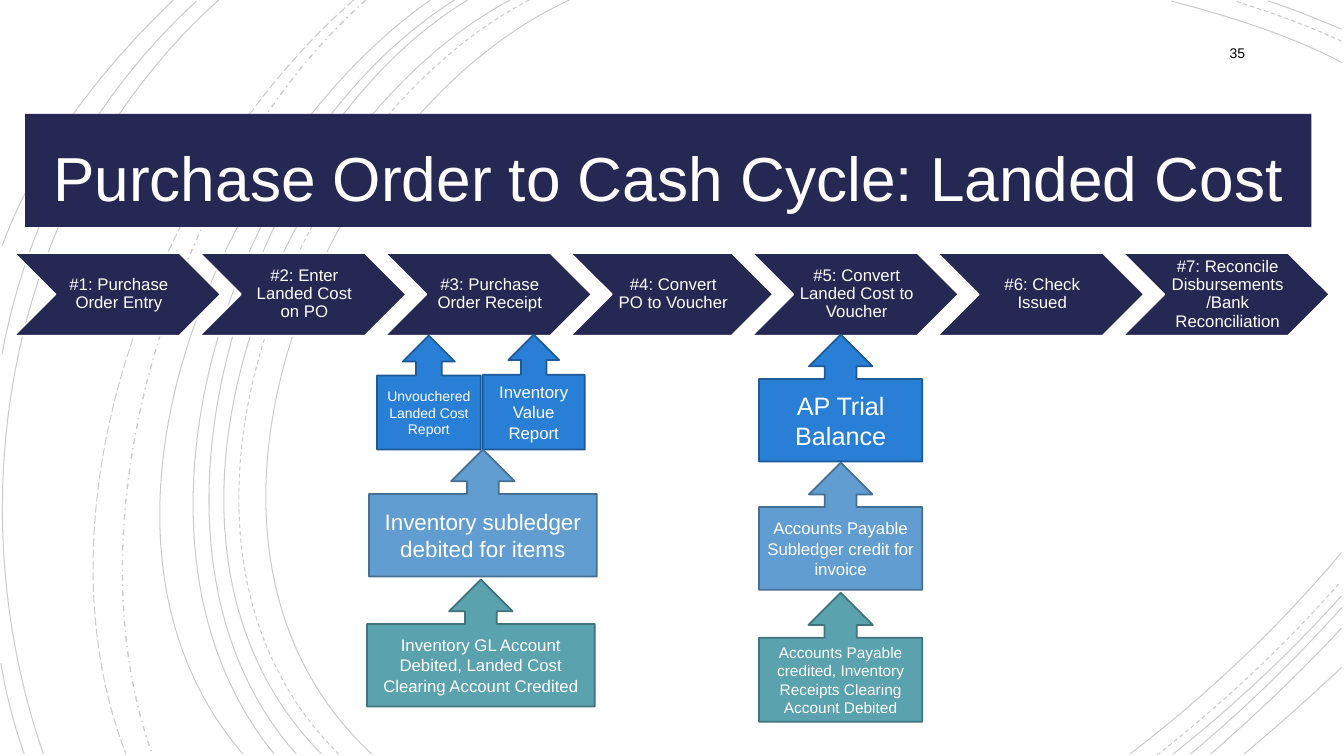
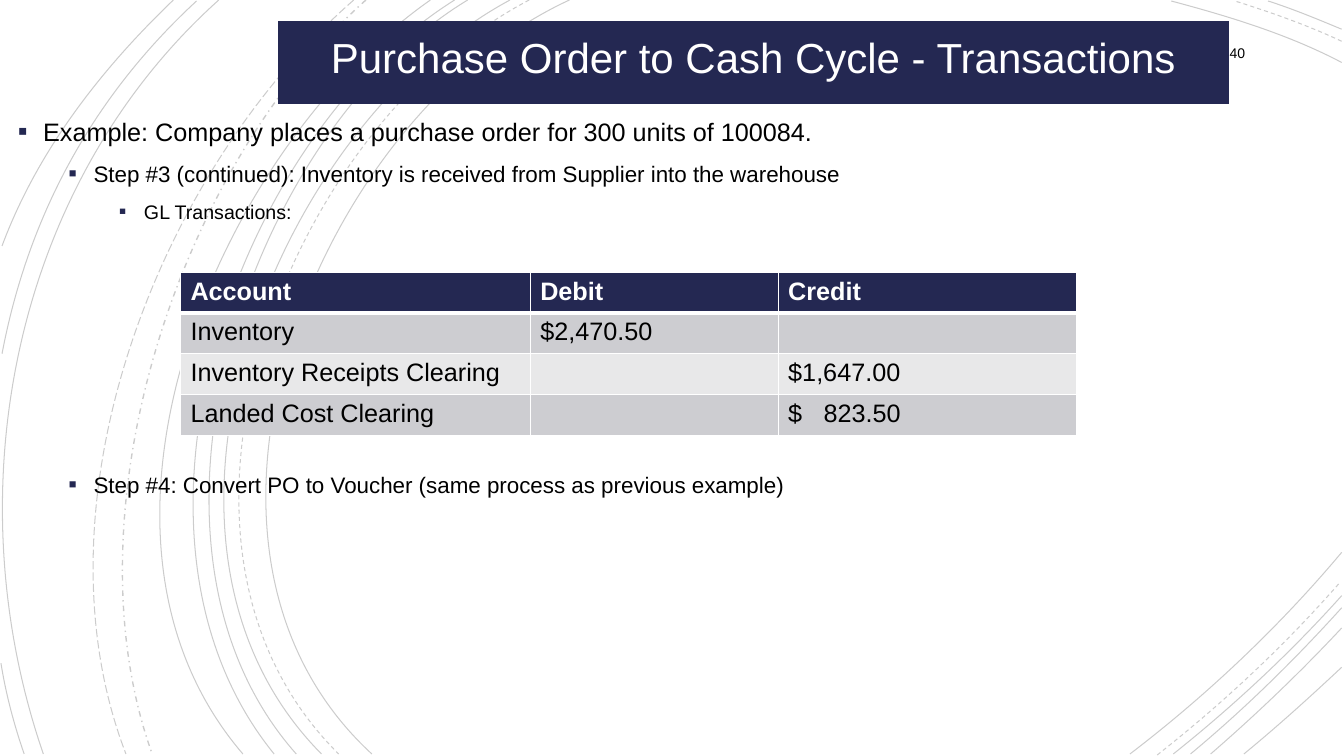
from pptx import Presentation
from pptx.dml.color import RGBColor as Rgb
from pptx.enum.dml import MSO_LINE as Dash
from pptx.enum.shapes import MSO_SHAPE as Geo
from pptx.enum.text import MSO_ANCHOR as Anchor, PP_ALIGN as Align
from pptx.oxml.ns import qn
from pptx.util import Emu, Inches, Pt
from lxml.etree import SubElement as Sub

COLS, ROWS = 133.33, 75
NAVY, WHITE, BLACK = "242852", "FFFFFF", "000000"
BLUE, SKY, TEAL = ("297FD5", "1D5A97"), ("629DD1", "466F94"), ("5AA2AE", "40737B")
GREY, PALE = "CDCDD1", "E8E8E9"

ARCS = {
    Dash.SOLID: [
        (56.5, 0, 31.5, 11.5, 14.3, 54, 36.9, 74.8),
        (133.1, 6.2, 127.8, 3.4, 121.8, 1.6, 116.2, 0.1),
        (112.1, 74.8, 119.7, 69, 126.9, 62.2, 133.1, 54.8),
        (50.6, 0, 27, 12.7, 11, 53.7, 31.9, 74.8),
        (133.1, 2.9, 130.7, 1.9, 128.3, 0.9, 125.8, 0.1),
        (116.4, 74.8, 122.3, 70.1, 128, 64.8, 133.1, 59.1),
        (46.4, 0, 24.4, 13.3, 11, 54.1, 29.4, 74.8),
        (118.1, 74.8, 123.4, 70.4, 128.4, 65.5, 133.1, 60.3),
        (45.1, 0, 23.1, 13.8, 9.7, 53.3, 27.2, 74.8),
        (120.1, 74.8, 124.6, 70.9, 129, 66.7, 133.1, 62.3),
        (42.7, 0, 21.7, 14.7, 5.3, 52.9, 24.1, 74.8),
        (123.4, 74.8, 126.7, 72.1, 129.9, 69.2, 133.1, 66.2),
        (21.7, 0, 1.1, 18.5, -4.6, 49, 4.3, 74.8),
        (19.5, 0.1, 9.2, 9.6, 2.8, 21.4, 0.2, 35.1),
        (0.1, 65.8, 0.6, 68.9, 1.4, 71.9, 2.4, 74.8),
        (17.2, 0, 10, 6.9, 3.7, 15, 0.2, 24.4),
    ],
    Dash.DASH: [
        (52.5, 0, 28.5, 12.5, 12.3, 53.7, 33.6, 74.8),
        (133.1, 4.1, 129.7, 2.5, 126, 1.2, 122.5, 0.1),
        (114.8, 74.9, 121.3, 69.8, 127.5, 64, 133, 57.7),
    ],
    Dash.DASH_DOT: [(36.3, 0, 17.6, 16.6, 6.5, 50.9, 15.1, 74.8)],
    Dash.LONG_DASH: [(35.1, 0, 15.7, 16.9, 2.9, 49.9, 12.5, 74.8)],
}

STEPS = [
    "#1: Purchase Order Entry",
    "#2: Enter Landed Cost on PO",
    "#3: Purchase Order Receipt",
    "#4: Convert PO to Voucher",
    "#5: Convert Landed Cost to Voucher",
    "#6: Check Issued",
    "#7: Reconcile Disbursements /Bank Reconciliation",
]

CALLS = [
    ((37.4, 33.3, 10.3, 11.3), BLUE, 10, "Unvouchered Landed Cost Report"),
    ((75.3, 33.2, 16.2, 12.6), BLUE, 18, "AP Trial Balance"),
    ((75.3, 45.9, 16.2, 12.6), SKY, 12, "Accounts Payable Subledger credit for invoice"),
    ((75.3, 58.8, 16.2, 12.8), TEAL, 11,
     "Accounts Payable credited, Inventory Receipts Clearing Account Debited"),
    ((47.9, 33.2, 10.1, 11.4), BLUE, 12, "Inventory Value Report"),
    ((36.6, 44.6, 22.6, 12.6), SKY, 16, "Inventory subledger debited for items"),
    ((36.4, 57.5, 22.6, 12.6), TEAL, 12,
     "Inventory GL Account Debited, Landed Cost Clearing Account Credited"),
]

POINTS = [
    (0, 18, 0, "Example: Company places a purchase order for 300 units of 100084."),
    (1, 16, 6, "Step #3 (continued): Inventory is received from Supplier into the warehouse"),
    (2, 14, 6, "GL Transactions:"),
    (1, 16, 173, "Step #4: Convert PO to Voucher (same process as previous example)"),
]

ENTRIES = [
    ("Account", "Debit", "Credit"),
    ("Inventory", "$2,470.50", ""),
    ("Inventory Receipts Clearing", "", "$1,647.00"),
    ("Landed Cost Clearing", "", "$\t823.50"),
]


def tint(code):
    return Rgb.from_string(code)


class Deck:
    font = "Arial"

    def __init__(self):
        self.show = Presentation()
        self.show.slide_width, self.show.slide_height = Inches(13.33), Inches(7.5)
        self.slide = None

    def x(self, cols):
        return Emu(round(self.show.slide_width * cols / COLS))

    def y(self, rows):
        return Emu(round(self.show.slide_height * rows / ROWS))

    def spot(self, box):
        left, top, wide, high = box
        return self.x(left), self.y(top), self.x(wide), self.y(high)

    def page(self, number):
        self.slide = self.show.slides.add_slide(self.show.slide_layouts[6])
        for dash, arcs in ARCS.items():
            for arc in arcs:
                self.arc(arc, dash)
        frame = self.text((114.5, 3.5, 10, 3.5))
        frame.vertical_anchor = Anchor.MIDDLE
        para = frame.paragraphs[0]
        para.alignment = Align.RIGHT
        self.run(para, number, 10)

    def arc(self, nums, dash):
        dots = [(self.x(a), self.y(b)) for a, b in zip(nums[::2], nums[1::2])]
        pen = self.slide.shapes.build_freeform(*dots[0])
        pen.add_line_segments(dots[1:], close=False)
        shape = pen.convert_to_shape()
        legs = list(shape._element.iter(qn("a:lnTo")))
        trace = legs[0].getparent()
        curve = Sub(trace, qn("a:cubicBezTo"))
        for leg in legs:
            curve.append(leg[0])
            trace.remove(leg)
        shape.shadow.inherit = False
        shape.fill.background()
        line = shape.line
        line.color.rgb = tint(BLACK)
        line.width = Pt(1 if dash == Dash.DASH_DOT else 0.75)
        line.dash_style = dash
        for color in line._get_or_add_ln().iter(qn("a:srgbClr")):
            Sub(color, qn("a:alpha"), val="20000")

    def run(self, para, words, size, color=BLACK, bold=False):
        run = para.add_run()
        run.text = words
        font = run.font
        font.name, font.size, font.bold = self.font, Pt(size), bold
        font.color.rgb = tint(color)

    def text(self, box):
        frame = self.slide.shapes.add_textbox(*self.spot(box)).text_frame
        frame.word_wrap = True
        return frame

    def shape(self, kind, box, fill, edge, words, size, pads, space=1):
        shape = self.slide.shapes.add_shape(kind, *self.spot(box))
        shape.shadow.inherit = False
        shape.fill.solid()
        shape.fill.fore_color.rgb = tint(fill)
        if edge:
            shape.line.color.rgb = tint(edge)
            shape.line.width = Pt(1.25)
        else:
            shape.line.fill.background()
        frame = shape.text_frame
        frame.word_wrap = True
        frame.vertical_anchor = Anchor.MIDDLE
        left, top, right, low = pads
        frame.margin_left, frame.margin_right = self.x(left), self.x(right)
        frame.margin_top, frame.margin_bottom = self.y(top), self.y(low)
        para = frame.paragraphs[0]
        para.alignment = Align.CENTER
        para.line_spacing = space
        self.run(para, words, size, WHITE)
        return frame

    def title(self, box, words, size, space=1):
        frame = self.shape(Geo.RECTANGLE, box, NAVY, None, words, size, (1, 1, 1, 0.5), space)
        frame.vertical_anchor = Anchor.TOP

    def chain(self, steps, left, top, high):
        for i, words in enumerate(steps):
            wide = 20.1 if i == 3 else 20.5
            self.shape(Geo.CHEVRON, (left, top, wide, high), NAVY, WHITE, words, 12,
                       (0.5, 0.2, 0.2, 0.2), 0.9)
            left += wide - 2.1

    def call(self, box, hues, size, words):
        self.shape(Geo.UP_ARROW_CALLOUT, box, *hues, words, size, (0.8, 0.5, 0.8, 0.5))

    def points(self, box, items):
        frame = self.text(box)
        for i, (level, size, gap, words) in enumerate(items):
            para = frame.add_paragraph() if i else frame.paragraphs[0]
            para.level = level
            para.line_spacing = 1.2
            if gap:
                para.space_before = Pt(gap)
            props = para._p.get_or_add_pPr()
            props.set("marL", str(self.x(2.5 + 5 * level)))
            props.set("indent", str(-self.x(2.5)))
            Sub(Sub(props, qn("a:buClr")), qn("a:srgbClr"), val=NAVY)
            Sub(props, qn("a:buSzPct"), val="110000")
            Sub(props, qn("a:buFont"), typeface=self.font)
            Sub(props, qn("a:buChar"), char="▪")
            self.run(para, words, size)

    def edges(self, cell, row):
        props = cell._tc.get_or_add_tcPr()
        for side in "LRTB":
            thick = (row, side) in ((0, "B"), (1, "T"))
            line = Sub(props, qn("a:ln" + side), w=str(Pt(3 if thick else 1)))
            Sub(Sub(line, qn("a:solidFill")), qn("a:srgbClr"), val=WHITE)

    def table(self, left, top, wides, high, rows):
        box = (left, top, sum(wides), high * len(rows))
        grid = self.slide.shapes.add_table(len(rows), len(wides), *self.spot(box)).table
        for col, wide in zip(grid.columns, wides):
            col.width = self.x(wide)
        for r, row in enumerate(rows):
            grid.rows[r].height = self.y(high)
            fill = (GREY if r % 2 else PALE) if r else NAVY
            for c, words in enumerate(row):
                cell = grid.cell(r, c)
                self.edges(cell, r)
                cell.fill.solid()
                cell.fill.fore_color.rgb = tint(fill)
                if not words:
                    continue
                para = cell.text_frame.paragraphs[0]
                if "\t" in words:
                    tabs = Sub(para._p.get_or_add_pPr(), qn("a:tabLst"))
                    Sub(tabs, qn("a:tab"), pos=str(self.x(3.5)), algn="l")
                self.run(para, words, 18, BLACK if r else WHITE, not r)


def main():
    deck = Deck()

    deck.page("35")
    deck.title((2.5, 11.3, 127.6, 11.2), "Purchase Order to Cash Cycle: Landed Cost", 44.4, 1.2)
    deck.chain(STEPS, 1.4, 25.1, 8.2)
    for call in CALLS:
        deck.call(*call)

    deck.page("40")
    deck.points((0.8, 10.4, 132.5, 61.2), POINTS)
    deck.title((27.6, 2.1, 94.3, 8.2), "Purchase Order to Cash Cycle - Transactions", 30)
    deck.table(17.9, 27, (34.7, 24.6, 29.6), 4.05, ENTRIES)

    deck.show.save("out.pptx")


if __name__ == "__main__":
    main()
